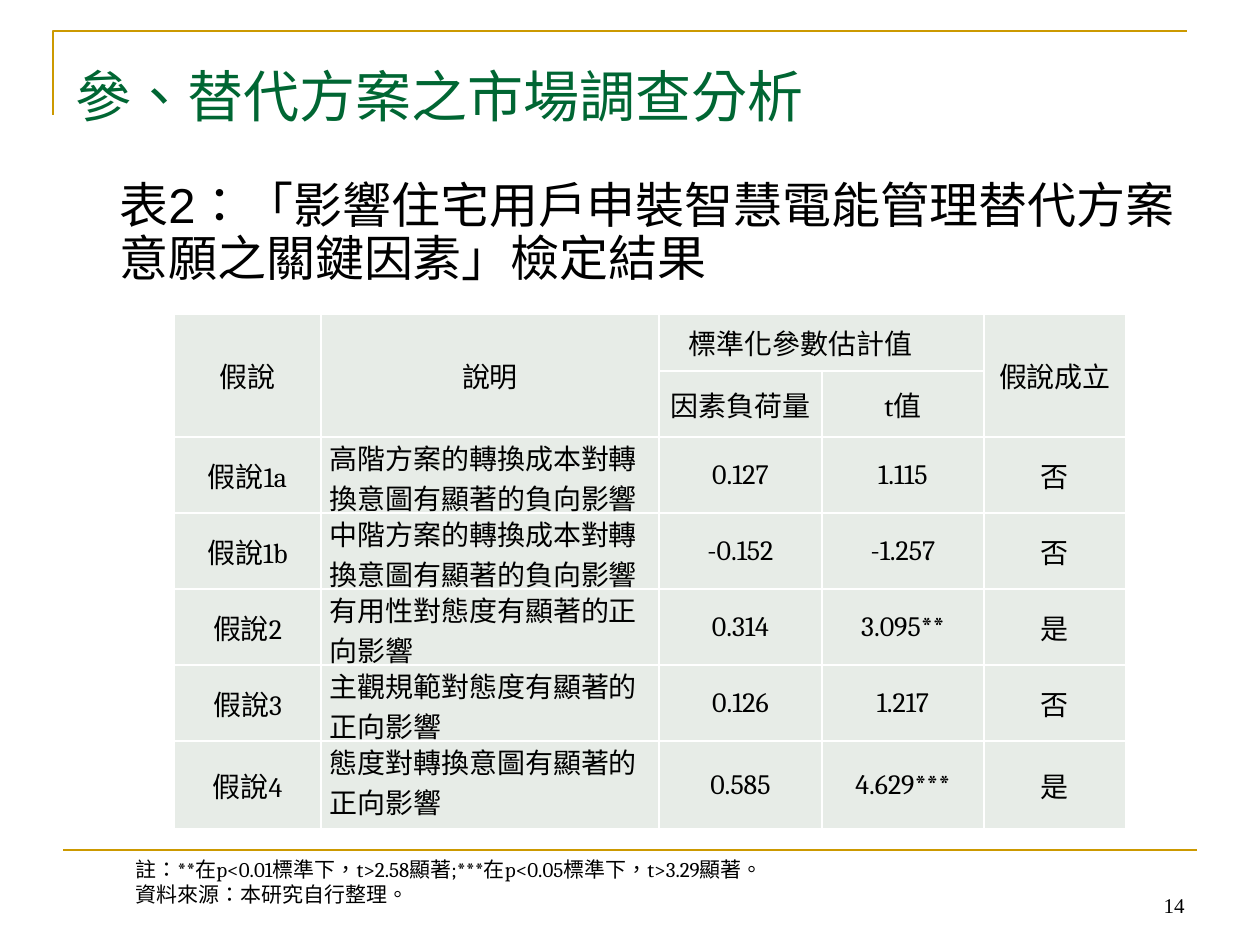
from lxml.etree import SubElement
from pptx import Presentation
from pptx.dml.color import RGBColor
from pptx.enum.lang import MSO_LANGUAGE_ID as Language
from pptx.enum.shapes import MSO_CONNECTOR as Connector
from pptx.enum.text import MSO_ANCHOR as Anchor, PP_ALIGN as Align
from pptx.oxml.ns import qn
from pptx.util import Pt

PX = 914400 / 126
GOLD = RGBColor(0xCC, 0x99, 0x00)
GREEN = RGBColor(0x00, 0x66, 0x33)
BLACK = RGBColor(0x00, 0x00, 0x00)
PALE = RGBColor(0xE7, 0xEC, 0xE7)
WHITE = RGBColor(0xFF, 0xFF, 0xFF)

COLUMN_WIDTHS = [147, 338, 163, 162, 142]
ROW_HEIGHTS = [57, 66, 76, 76, 76, 76, 88]
HEADER = [
    ["假說", "說明", "標準化參數估計值", "", "假說成立"],
    ["", "", "因素負荷量", "t值", ""],
]
RESULTS = [
    ["假說1a", "高階方案的轉換成本對轉換意圖有顯著的負向影響", "0.127", "1.115", "否"],
    ["假說1b", "中階方案的轉換成本對轉換意圖有顯著的負向影響", "-0.152", "-1.257", "否"],
    ["假說2", "有用性對態度有顯著的正向影響", "0.314", "3.095**", "是"],
    ["假說3", "主觀規範對態度有顯著的正向影響", "0.126", "1.217", "否"],
    ["假說4", "態度對轉換意圖有顯著的正向影響", "0.585", "4.629***", "是"],
]
MERGES = [((0, 0), (1, 0)), ((0, 1), (1, 1)), ((0, 2), (0, 3)), ((0, 4), (1, 4))]


def emu(pixels):
    return round(pixels * PX)


def write_text(frame, text, size, font, color=BLACK, align=Align.LEFT,
               margin=0, indent=0, spacing=None):
    """Fill a text frame, one paragraph for each line of text."""
    for index, line in enumerate(text.split("\n")):
        paragraph = frame.add_paragraph() if index else frame.paragraphs[0]
        paragraph.alignment = align
        if spacing:
            paragraph.line_spacing = spacing
        if margin or indent:
            properties = paragraph._p.get_or_add_pPr()
            properties.set("marL", str(emu(margin)))
            properties.set("indent", str(emu(indent)))
        run = paragraph.add_run()
        run.text = line
        run.font.size = Pt(size)
        run.font.name = font
        run.font.color.rgb = color
        run.font.language_id = Language.TRADITIONAL_CHINESE


def add_text(slide, box, text, anchor=Anchor.TOP, **text_format):
    shape = slide.shapes.add_textbox(*map(emu, box))
    shape.text_frame.word_wrap = True
    shape.text_frame.vertical_anchor = anchor
    write_text(shape.text_frame, text, **text_format)


def add_corner(slide, box):
    """Draw the left and top sides of the box as one open line."""
    left, top, width, height = box
    builder = slide.shapes.build_freeform(left, top + height, scale=PX)
    builder.add_line_segments([(left, top), (left + width, top)], close=False)
    shape = builder.convert_to_shape()
    shape.shadow.inherit = False
    shape.fill.background()
    shape.line.color.rgb = GOLD
    shape.line.width = Pt(1.5)


def add_rule(slide, left, top, width):
    rule = slide.shapes.add_connector(
        Connector.STRAIGHT, emu(left), emu(top), emu(left + width), emu(top))
    rule.line.color.rgb = GOLD
    rule.line.width = Pt(1.5)
    SubElement(rule._element.spPr, qn("a:effectLst"))


def add_borders(cell):
    properties = cell._tc.get_or_add_tcPr()
    for side in ("a:lnL", "a:lnR", "a:lnT", "a:lnB"):
        line = SubElement(properties, qn(side), w=str(Pt(1)))
        fill = SubElement(line, qn("a:solidFill"))
        SubElement(fill, qn("a:srgbClr"), val=str(WHITE))


def style_cell(cell, text, is_description, is_group_heading):
    cell.margin_left = cell.margin_right = emu(9)
    cell.margin_top = cell.margin_bottom = 0
    cell.vertical_anchor = Anchor.TOP if is_description else Anchor.MIDDLE
    add_borders(cell)
    cell.fill.solid()
    cell.fill.fore_color.rgb = PALE
    if text:
        left_aligned = is_description or is_group_heading
        write_text(cell.text_frame, text, size=16, font="Cambria",
                   align=Align.LEFT if left_aligned else Align.CENTER,
                   indent=21 if is_group_heading else 0)


def add_results_table(slide, left, top):
    rows = HEADER + RESULTS
    box = (left, top, sum(COLUMN_WIDTHS), sum(ROW_HEIGHTS))
    table = slide.shapes.add_table(
        len(rows), len(COLUMN_WIDTHS), *map(emu, box)).table
    table.first_row = table.horz_banding = False
    for column, width in zip(table.columns, COLUMN_WIDTHS):
        column.width = emu(width)
    for row, height in zip(table.rows, ROW_HEIGHTS):
        row.height = emu(height)
    for first, last in MERGES:
        table.cell(*first).merge(table.cell(*last))
    for r, texts in enumerate(rows):
        for c, text in enumerate(texts):
            style_cell(table.cell(r, c), text,
                       is_description=c == 1 and r >= len(HEADER),
                       is_group_heading=(r, c) == (0, 2))


def add_footer(slide, box):
    """Place the table notes at the left and the page number at the right."""
    left, top, width, height = box
    notes = ("註：**在p<0.01標準下，t>2.58顯著;***在p<0.05標準下，t>3.29顯著。\n"
             "資料來源：本研究自行整理。")
    add_text(slide, (left + 60, top, 794, height), notes,
             anchor=Anchor.MIDDLE, size=12, font="Cambria")
    add_text(slide, (left + width - 294, top + 11, 294, height), "14",
             anchor=Anchor.BOTTOM, size=12, font="Times New Roman",
             align=Align.RIGHT)


def main():
    presentation = Presentation()
    presentation.slide_width = emu(1260)
    presentation.slide_height = emu(945)
    slide = presentation.slides.add_slide(presentation.slide_layouts[6])
    slide.background.fill.solid()
    slide.background.fill.fore_color.rgb = WHITE

    add_corner(slide, (53, 31, 1134, 84))
    add_rule(slide, 63, 850, 1134)
    add_text(slide, (63, 55, 1197, 110), "參、替代方案之市場調查分析",
             size=32, font="Arial", color=GREEN)
    add_text(slide, (94, 175, 1118, 120),
             "表2：「影響住宅用戶申裝智慧電能管理替代方案意願之關鍵因素」檢定結果",
             size=28, font="Arial", margin=13, spacing=0.9)
    add_results_table(slide, 174, 314)
    add_footer(slide, (63, 850, 1134, 63))
    presentation.save("out.pptx")


if __name__ == "__main__":
    main()
